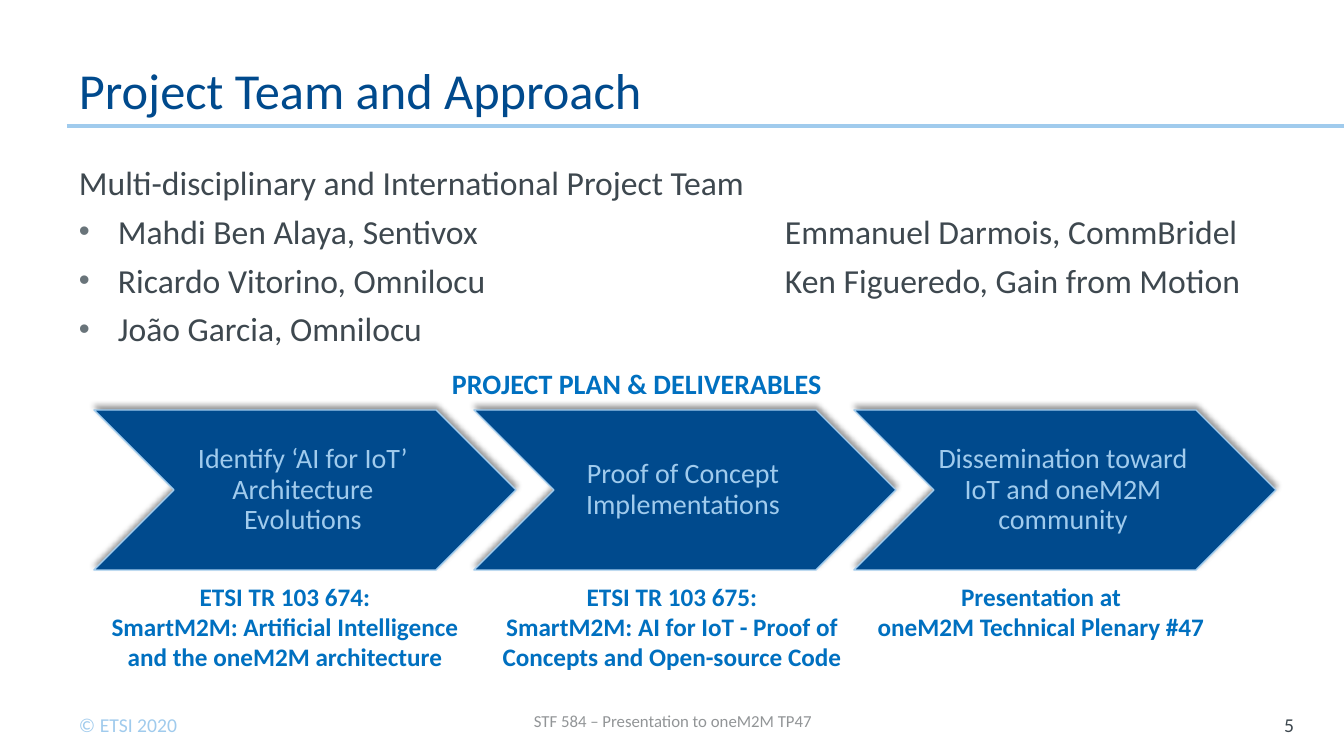
from lxml import etree
from pptx import Presentation
from pptx.dml.color import RGBColor
from pptx.enum.shapes import MSO_CONNECTOR, MSO_SHAPE
from pptx.enum.text import MSO_ANCHOR, PP_ALIGN
from pptx.oxml import parse_xml
from pptx.oxml.ns import qn
from pptx.util import Pt

PX = 914400 / 100.8  # EMU in one px
NAVY = RGBColor(0x00, 0x4A, 0x8D)
SKY = RGBColor(0xA0, 0xCB, 0xED)
BLUE = RGBColor(0x00, 0x70, 0xC0)
SLATE = RGBColor(0x3E, 0x48, 0x4F)
GREY = RGBColor(0x92, 0x95, 0x97)
WHITE = RGBColor(0xFF, 0xFF, 0xFF)
LEFT, MID, RIGHT = PP_ALIGN.LEFT, PP_ALIGN.CENTER, PP_ALIGN.RIGHT
TOP, CENTER, BOTTOM = MSO_ANCHOR.TOP, MSO_ANCHOR.MIDDLE, MSO_ANCHOR.BOTTOM
NS = 'xmlns:a="http://schemas.openxmlformats.org/drawingml/2006/main"'
BULLET = (
    f'<a:buClr {NS}><a:srgbClr val="69747A"/></a:buClr>',
    f'<a:buSzPct {NS} val="93000"/>',
    f'<a:buFont {NS} typeface="Arial"/>',
    f'<a:buChar {NS} char="•"/>',
    f'<a:tabLst {NS}><a:tab pos="{round(706 * PX)}" algn="l"/></a:tabLst>',
)
SHADOW = (f'<a:effectLst {NS}><a:outerShdw blurRad="50800" dist="38100" '
          'dir="16200000" algn="b" rotWithShape="0"><a:srgbClr val="000000">'
          '<a:alpha val="40000"/></a:srgbClr></a:outerShdw></a:effectLst>')


def px(*nums):
    return [round(n * PX) for n in nums]


def add_text(box, lines, size, color, align=LEFT, anchor=TOP,
             inset=(10, 5, 10, 5), bold=False, para={}):
    frame = slide.shapes.add_textbox(*px(*box)).text_frame
    left, top, right, bottom = px(*inset)
    look = {"word_wrap": True, "vertical_anchor": anchor,
            "margin_left": left, "margin_top": top,
            "margin_right": right, "margin_bottom": bottom}
    for key, val in look.items():
        setattr(frame, key, val)
    for i, line in enumerate(lines):
        par = frame.paragraphs[0] if i == 0 else frame.add_paragraph()
        run = par.add_run()
        run.text = line
        for key, val in {"alignment": align, **para}.items():
            setattr(par, key, val)
        for key, val in {"name": "Calibri", "size": Pt(size), "bold": bold}.items():
            setattr(run.font, key, val)
        run.font.color.rgb = color
    return frame


deck = Presentation()
deck.slide_width, deck.slide_height = px(1344, 756)
slide = deck.slides.add_slide(deck.slide_layouts[6])
slide.background.fill.solid()
slide.background.fill.fore_color.rgb = WHITE

# Title and rule
add_text((67, 30, 1050, 96), ["Project Team and Approach"], 36, NAVY,
         anchor=BOTTOM, inset=(12, 6, 12, 6), para={"line_spacing": Pt(30)})
rule = slide.shapes.add_connector(MSO_CONNECTOR.STRAIGHT, *px(67, 126, 1344, 126))
rule.line.color.rgb = SKY
rule.line.width = Pt(2.25)
etree.SubElement(rule._element.spPr, qn("a:effectLst"))

# Team list
team = add_text((67, 156, 1238, 219), [
    "Multi-disciplinary and International Project Team",
    "Mahdi Ben Alaya, Sentivox\tEmmanuel Darmois, CommBridel",
    "Ricardo Vitorino, Omnilocu\tKen Figueredo, Gain from Motion",
    "João Garcia, Omnilocu",
], 24, SLATE, inset=(12, 6, 12, 6))
for par in team.paragraphs[1:]:
    par.space_before = Pt(6)
    props = par._p.get_or_add_pPr()
    props.set("marL", str(round(39 * PX)))
    props.set("indent", str(round(-39 * PX)))
    for part in BULLET:
        props.append(parse_xml(part))

# Plan: chevrons with a deliverable under each
add_text((442, 361, 567, 44), ["PROJECT PLAN & DELIVERABLES"], 20, BLUE, bold=True)
steps = [
    ("Identify ‘AI for IoT’ Architecture Evolutions", 86, 398,
     ["ETSI TR 103 674:",
      "SmartM2M: Artificial Intelligence and the oneM2M architecture"]),
    ("Proof of Concept Implementations", 477, 390,
     ["ETSI TR 103 675:",
      "SmartM2M: AI for IoT - Proof of Concepts and Open-source Code"]),
    ("Dissemination toward IoT and oneM2M community", 846, 390,
     ["Presentation at", "oneM2M Technical Plenary #47"]),
]
for i, (step, left, width, result) in enumerate(steps):
    x = 94 + 380 * i
    arrow = slide.shapes.add_shape(MSO_SHAPE.CHEVRON, *px(x, 410, 422, 160))
    arrow.fill.solid()
    arrow.fill.fore_color.rgb = NAVY
    arrow.line.color.rgb = SKY
    arrow.line.width = Pt(1)
    arrow._element.spPr.append(parse_xml(SHADOW))
    add_text((x + 79, 410, 263, 160), [step], 20, SKY, MID, CENTER,
             inset=(0, 3, 3, 3), para={"line_spacing": 0.9})
    add_text((left, 576, width, 102), result, 18, BLUE, MID, bold=True)

# Footer
add_text((69, 708, 135, 34), ["© ETSI 2020"], 14, SKY)
add_text((446, 701, 454, 40), ["STF 584 – Presentation to oneM2M TP47"], 12, GREY,
         MID, CENTER)
add_text((1235, 705, 69, 40), ["5"], 14, SLATE, RIGHT, CENTER, inset=(0, 5, 10, 5))

deck.save("out.pptx")
